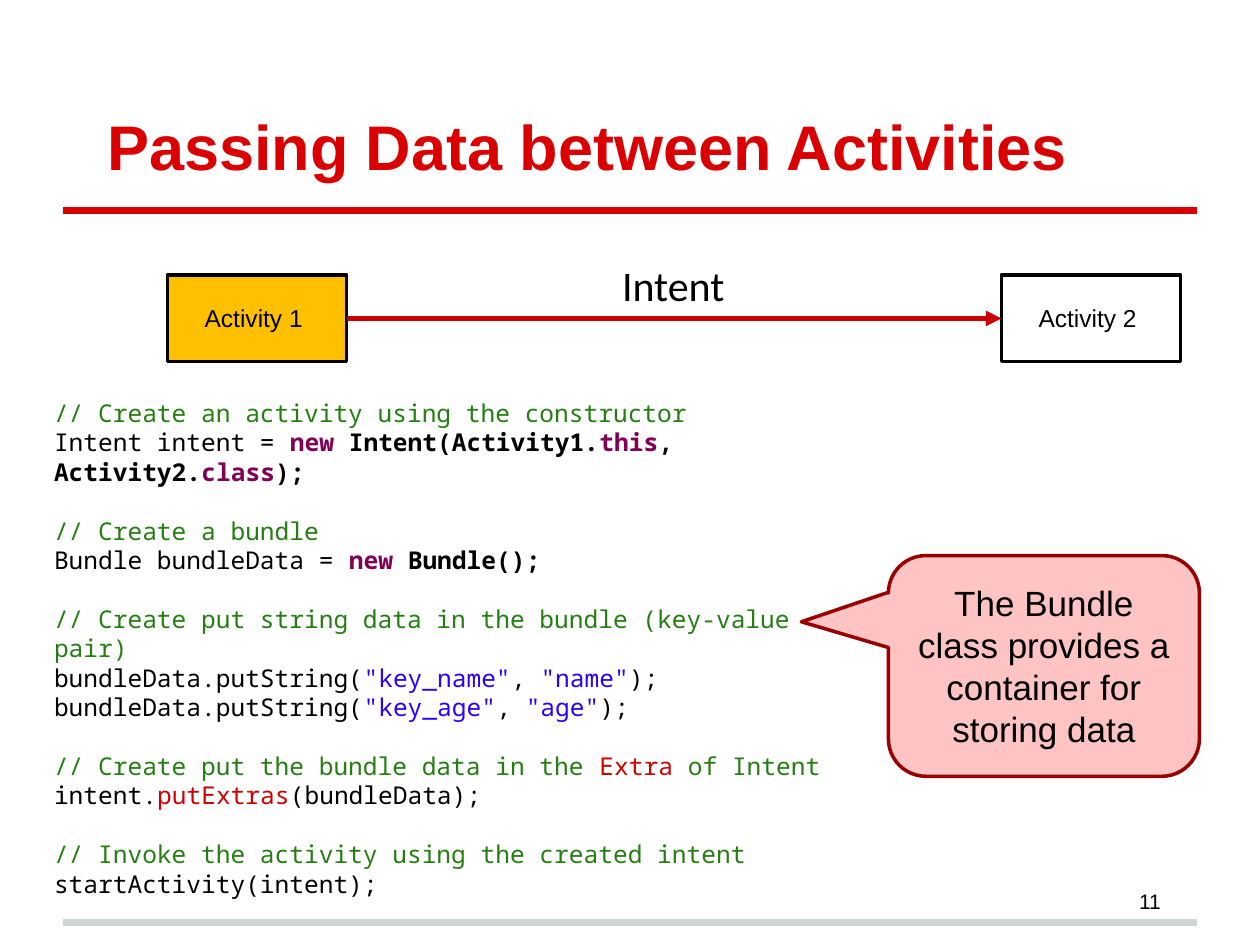
from lxml.etree import SubElement
from pptx import Presentation
from pptx.dml.color import RGBColor
from pptx.enum.shapes import MSO_CONNECTOR, MSO_SHAPE
from pptx.enum.text import MSO_ANCHOR, MSO_AUTO_SIZE, PP_ALIGN
from pptx.oxml.ns import qn
from pptx.util import Cm, Pt

BLACK = RGBColor(0x00, 0x00, 0x00)
WHITE = RGBColor(0xFF, 0xFF, 0xFF)
TITLE_RED = RGBColor(0xDA, 0x00, 0x02)
RULE_GRAY = RGBColor(0xCF, 0xD4, 0xD4)
ARROW_RED = RGBColor(0xC9, 0x00, 0x00)
AMBER = RGBColor(0xFF, 0xC0, 0x00)
PINK = RGBColor(0xFE, 0xC3, 0xC3)
DARK_RED = RGBColor(0x97, 0x01, 0x01)
COMMENT = RGBColor(0x25, 0x7E, 0x12)
KEYWORD = RGBColor(0x7F, 0x00, 0x55)
STRING = RGBColor(0x2A, 0x00, 0xFF)
HIGHLIGHT = RGBColor(0xCC, 0x02, 0x02)

deck = Presentation()
deck.slide_width, deck.slide_height = Cm(25.4), Cm(19.05)
page = deck.slides.add_slide(deck.slide_layouts[5])


def add_line(left, right, height, color, width):
    line = page.shapes.add_connector(
        MSO_CONNECTOR.STRAIGHT, Cm(left), Cm(height), Cm(right), Cm(height))
    line.line.color.rgb = color
    line.line.width = Pt(width)
    SubElement(line._element.spPr, qn("a:effectLst"))
    return line


def write(shape, text, size, color=BLACK, name="Arial", align=PP_ALIGN.CENTER):
    paragraph = shape.text_frame.paragraphs[0]
    paragraph.text = text
    paragraph.alignment = align
    paragraph.font.size = Pt(size)
    paragraph.font.name = name
    paragraph.font.color.rgb = color
    return paragraph


add_line(1.27, 24.13, 18.59, RULE_GRAY, 4)
add_line(1.27, 24.13, 4.24, TITLE_RED, 4)

title = page.shapes.title
title.left, title.top, title.width, title.height = Cm(1.27), Cm(0.76), Cm(22.86), Cm(3.18)
frame = title.text_frame
frame.auto_size = MSO_AUTO_SIZE.NONE
frame.vertical_anchor = MSO_ANCHOR.BOTTOM
frame.margin_left = frame.margin_right = frame.margin_top = frame.margin_bottom = Cm(0.25)
heading = write(title, "Passing Data between Activities", 36, TITLE_RED, align=PP_ALIGN.LEFT)
heading.font.bold = True
heading._p.get_or_add_pPr().set("indent", str(Cm(0.64)))

number = page.shapes.add_textbox(Cm(17.93), Cm(17.65), Cm(5.72), Cm(1.02))
number.text_frame.word_wrap = True
number.text_frame.vertical_anchor = MSO_ANCHOR.MIDDLE
write(number, "11", 12, align=PP_ALIGN.RIGHT)

shapes = [
    (MSO_SHAPE.RECTANGLE, 3.38, 5.54, 3.61, 1.75, AMBER, BLACK, "Activity 1 ", 14),
    (MSO_SHAPE.RECTANGLE, 20.19, 5.54, 3.61, 1.75, WHITE, BLACK, "Activity 2 ", 14),
    (MSO_SHAPE.ROUNDED_RECTANGULAR_CALLOUT, 17.91, 11.2, 6.27, 4.45, PINK, DARK_RED,
     "The Bundle class provides a container for storing data", 20),
]
for kind, left, top, width, height, fill, outline, text, size in shapes:
    shape = page.shapes.add_shape(kind, Cm(left), Cm(top), Cm(width), Cm(height))
    shape.shadow.inherit = False
    shape.fill.solid()
    shape.fill.fore_color.rgb = fill
    shape.line.color.rgb = outline
    shape.line.width = Pt(2)
    shape.text_frame.word_wrap = True
    shape.text_frame.vertical_anchor = MSO_ANCHOR.MIDDLE
    write(shape, text, size)
    if kind == MSO_SHAPE.ROUNDED_RECTANGULAR_CALLOUT:
        shape.adjustments[0] = -0.78
        shape.adjustments[1] = -0.2
        shape.adjustments[2] = 0.17

arrow = add_line(6.99, 20.19, 6.42, ARROW_RED, 3)
SubElement(arrow.line._get_or_add_ln(), qn("a:tailEnd"), type="triangle")

label = page.shapes.add_textbox(Cm(12.29), Cm(5.11), Cm(2.59), Cm(1.3))
label.text_frame.word_wrap = False
write(label, "Intent", 24, name="Calibri", align=PP_ALIGN.LEFT)

code_blocks = [
    [
        [("// Create an activity using the constructor", COMMENT, False)],
        [("Intent intent = ", BLACK, False), ("new ", KEYWORD, True),
         ("Intent(Activity1.", BLACK, True), ("this", KEYWORD, True),
         (", Activity2.", BLACK, True), ("class", KEYWORD, True), (");", BLACK, True)],
    ],
    [
        [("// Create a bundle", COMMENT, False)],
        [("Bundle bundleData = ", BLACK, False), ("new", KEYWORD, True),
         (" Bundle();", BLACK, True)],
    ],
    [
        [("// Create put string data in the bundle (key-value pair)", COMMENT, False)],
        *[[("bundleData.putString(", BLACK, False), (f'"key_{key}"', STRING, False),
           (", ", BLACK, False), (f'"{key}"', STRING, False), (");", BLACK, False)]
          for key in ("name", "age")],
    ],
    [
        [("// Create put the bundle data in the ", COMMENT, False),
         ("Extra", HIGHLIGHT, False), (" of Intent", COMMENT, False)],
        [("intent.", BLACK, False), ("putExtras", HIGHLIGHT, False),
         ("(bundleData);", BLACK, False)],
    ],
    [
        [("// Invoke the activity using the created intent", COMMENT, False)],
        [("startActivity(intent);", BLACK, False)],
    ],
]
code = page.shapes.add_textbox(Cm(0.84), Cm(7.9), Cm(17.09), Cm(9.25))
code.text_frame.word_wrap = True
paragraph = code.text_frame.paragraphs[0]
for block_index, block in enumerate(code_blocks):
    for line_index, spans in enumerate(block):
        if block_index or line_index:
            paragraph = code.text_frame.add_paragraph()
        if block_index and line_index == 0:
            paragraph.space_before = Pt(16.8)
        paragraph.font.name = "Noto Sans Mono"
        paragraph.font.size = Pt(14)
        for text, color, bold in spans:
            span = paragraph.add_run()
            span.text = text
            span.font.color.rgb = color
            span.font.bold = bold

deck.save("out.pptx")
